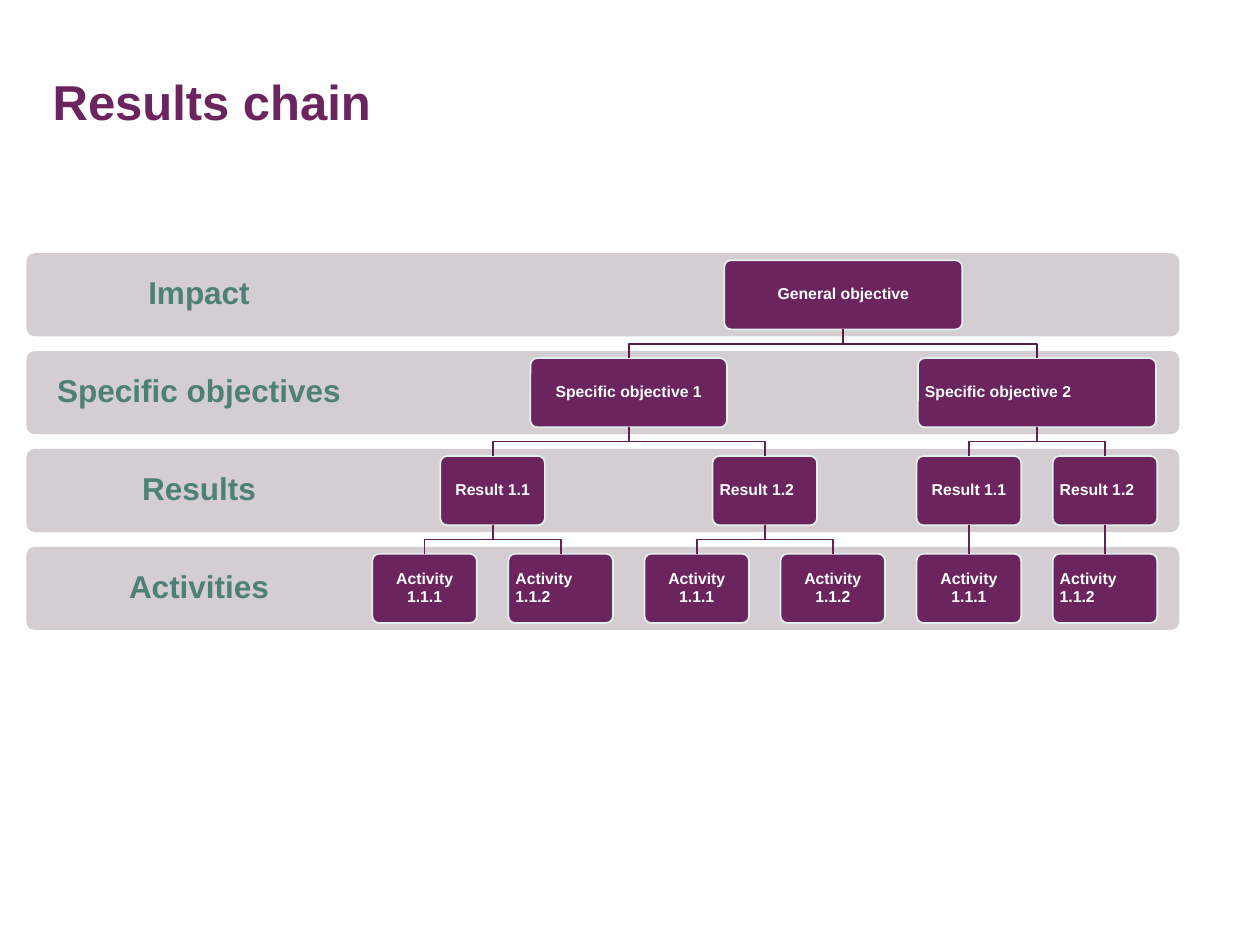
from lxml import etree
from pptx import Presentation
from pptx.dml.color import RGBColor
from pptx.enum import shapes, text
from pptx.oxml.ns import qn
from pptx.util import Inches, Pt

PLUM = RGBColor(0x6C, 0x24, 0x5E)
TOP_LINK = RGBColor(0x56, 0x1D, 0x4B)
LINK = RGBColor(0x62, 0x21, 0x55)
MINT = RGBColor(0xE2, 0xF0, 0xED)
BAND = RGBColor(0xD4, 0xCD, 0xD2)
GREEN = RGBColor(0x4D, 0x80, 0x76)
WHITE = RGBColor(0xFF, 0xFF, 0xFF)
CENTER, LEFT = text.PP_ALIGN.CENTER, text.PP_ALIGN.LEFT

TITLE = "Results chain"
LEVELS = ["Impact", "Specific objectives", "Results", "Activities"]
SMALL, MEDIUM, WIDE = 0.83, 1.56, 1.89
# Each node: text, box width, alignment, children
TREE = ("General objective", WIDE, CENTER, [
    ("Specific objective 1", MEDIUM, CENTER, [
        ("Result 1.1", SMALL, CENTER, [
            ("Activity 1.1.1", SMALL, CENTER, []),
            ("Activity 1.1.2", SMALL, LEFT, [])]),
        ("Result 1.2", SMALL, LEFT, [
            ("Activity 1.1.1", SMALL, CENTER, []),
            ("Activity 1.1.2", SMALL, CENTER, [])])]),
    ("Specific objective 2", WIDE, LEFT, [
        ("Result 1.1", SMALL, CENTER, [
            ("Activity 1.1.1", SMALL, CENTER, [])]),
        ("Result 1.2", SMALL, LEFT, [
            ("Activity 1.1.2", SMALL, LEFT, [])])])])

BAND_X, BAND_Y, BAND_W, BAND_H = 0.21, 2.01, 9.15, 0.66
LABEL_W = 2.74
ROW_PITCH = 2.33 / 3
BOX_H = 0.55
FIRST_LEAF_X, LEAF_PITCH = 3.37, 1.08

prs = Presentation()
prs.slide_width, prs.slide_height = Inches(10), Inches(7.5)
s = prs.slides.add_slide(prs.slide_layouts[6])


def set_text(sp, words, size, color, align=CENTER, inset=0.04, right=None):
    tf = sp.text_frame
    tf.word_wrap = True
    tf.vertical_anchor = text.MSO_ANCHOR.MIDDLE
    tf.margin_left = tf.margin_top = tf.margin_bottom = Inches(inset)
    tf.margin_right = Inches(inset if right is None else right)
    p = tf.paragraphs[0]
    p.alignment, p.line_spacing = align, 0.9
    r = p.add_run()
    r.text = words
    r.font.name, r.font.size, r.font.bold = "Arial", Pt(size), True
    r.font.color.rgb = color


def add_round_box(x, y, w, h, fill, line=None):
    sp = s.shapes.add_shape(shapes.MSO_SHAPE.ROUNDED_RECTANGLE,
                            Inches(x), Inches(y), Inches(w), Inches(h))
    sp.adjustments[0] = 0.1
    sp.shadow.inherit = False
    sp.fill.solid()
    sp.fill.fore_color.rgb = fill
    if line is None:
        sp.line.fill.background()
    else:
        sp.line.color.rgb, sp.line.width = line, Pt(1)
    return sp


def link(parent, child, color):
    """Join a parent's bottom to a child's top, with a step if they are not aligned."""
    x1, y1 = parent.left + parent.width // 2, parent.top + parent.height
    x2, y2 = child.left + child.width // 2, child.top
    if abs(x1 - x2) < Inches(0.01):
        sp = s.shapes.add_connector(shapes.MSO_CONNECTOR.STRAIGHT, x1, y1, x2, y2)
        sp.begin_connect(parent, 2)
        sp.end_connect(child, 0)
        etree.SubElement(sp._element.spPr, qn("a:effectLst"))
    else:
        mid = (y1 + y2) // 2
        path = s.shapes.build_freeform(x1, y1)
        path.add_line_segments([(x1, mid), (x2, mid), (x2, y2)], close=False)
        sp = path.convert_to_shape()
        sp.fill.background()
        sp.shadow.inherit = False
    sp.line.color.rgb, sp.line.width = color, Pt(1)


def add_node(node, leaf_centers, level=0):
    """Draw a node centred over the outer edges of its children."""
    words, w, align, children = node
    kids = [add_node(child, leaf_centers, level + 1) for child in children]
    if kids:
        center = (kids[0].left + kids[-1].left + kids[-1].width) / Inches(2)
    else:
        center = next(leaf_centers)
    y = BAND_Y + level * ROW_PITCH + (BAND_H - BOX_H) / 2
    sp = add_round_box(center - w / 2, y, w, BOX_H, PLUM, MINT)
    set_text(sp, words, 9, WHITE, align)
    for kid in kids:
        link(sp, kid, LINK if level else TOP_LINK)
    return sp


title = s.shapes.add_textbox(Inches(0.32), Inches(0.48), Inches(9.36), Inches(0.7))
set_text(title, TITLE, 28, PLUM, LEFT, inset=0.1)

for i, label in enumerate(LEVELS):
    band = add_round_box(BAND_X, BAND_Y + i * ROW_PITCH, BAND_W, BAND_H, BAND)
    set_text(band, label, 18, GREEN, inset=0.14, right=BAND_W - LABEL_W + 0.14)

add_node(TREE, (FIRST_LEAF_X + i * LEAF_PITCH for i in range(6)))

prs.save("out.pptx")
